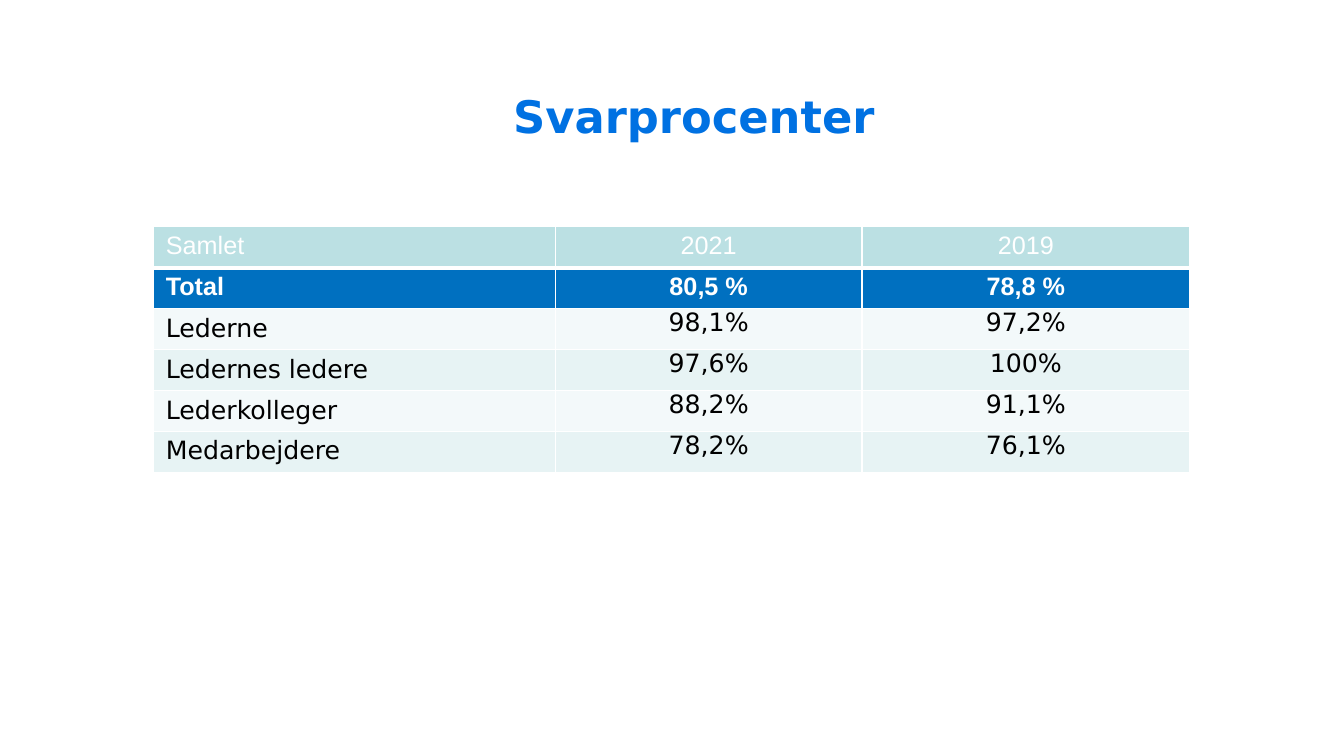
from dataclasses import dataclass

from lxml.etree import SubElement
from pptx import Presentation
from pptx.dml.color import RGBColor
from pptx.enum.text import MSO_ANCHOR, PP_ALIGN
from pptx.oxml.ns import qn
from pptx.util import Pt

PX = 9525  # EMU per px, 96 px to the inch


@dataclass(frozen=True)
class Theme:
    heading_font: str = "DejaVu Sans"
    summary_font: str = "Arial"
    title_size: int = 32
    table_size: int = 18
    title: str = "0071E2"
    white: str = "FFFFFF"
    black: str = "000000"
    header_fill: str = "BBE0E3"
    total_fill: str = "0070C0"
    bands: tuple = ("F3F9FA", "E7F3F4")


THEME = Theme()

RESPONSE_RATES = [
    ("Samlet", "2021", "2019"),
    ("Total", "80,5 %", "78,8 %"),
    ("Lederne", "98,1%", "97,2%"),
    ("Ledernes ledere", "97,6%", "100%"),
    ("Lederkolleger", "88,2%", "91,1%"),
    ("Medarbejdere", "78,2%", "76,1%"),
]
COLUMN_WIDTHS = (383, 292, 312)
ROW_HEIGHT = 39


def px(*lengths):
    return [length * PX for length in lengths]


def style_paragraph(paragraph, font_name, size, color, bold, align):
    paragraph.alignment = align
    font = paragraph.font
    font.name, font.size, font.bold = font_name, Pt(size), bold
    font.color.rgb = RGBColor.from_string(color)


def row_style(row):
    """Fill, text colour, font and weight of a table row."""
    if row == 0:
        return THEME.header_fill, THEME.white, THEME.summary_font, False
    if row == 1:
        return THEME.total_fill, THEME.white, THEME.summary_font, True
    return THEME.bands[row % 2], THEME.black, THEME.heading_font, False


def add_borders(cell, bottom_width):
    properties = cell._tc.get_or_add_tcPr()
    for side, width in (("L", 1), ("R", 1), ("T", 1), ("B", bottom_width)):
        line = SubElement(properties, qn(f"a:ln{side}"), w=str(Pt(width)))
        SubElement(SubElement(line, qn("a:solidFill")), qn("a:srgbClr"), val=THEME.white)


def place_title(slide, left, top, width, height):
    title = slide.shapes.title
    title.left, title.top, title.width, title.height = px(left, top, width, height)
    title.text_frame.text = "Svarprocenter"
    title.text_frame.vertical_anchor = MSO_ANCHOR.MIDDLE
    style_paragraph(title.text_frame.paragraphs[0], THEME.heading_font,
                    THEME.title_size, THEME.title, True, PP_ALIGN.CENTER)


def fill_cell(cell, text, row, column):
    fill, color, font_name, bold = row_style(row)
    is_rate = row > 1 and column > 0
    side, edge = px(7, 0) if is_rate else px(12, 5)
    cell.margin_left = cell.margin_right = side
    cell.margin_top = cell.margin_bottom = edge
    add_borders(cell, bottom_width=3 if row == 0 else 1)
    cell.fill.solid()
    cell.fill.fore_color.rgb = RGBColor.from_string(fill)
    cell.text = text
    style_paragraph(cell.text_frame.paragraphs[0], font_name, THEME.table_size, color,
                    bold, PP_ALIGN.CENTER if column else PP_ALIGN.LEFT)


def add_rate_table(slide, left, top):
    width, height = sum(COLUMN_WIDTHS), ROW_HEIGHT * len(RESPONSE_RATES)
    rates = slide.shapes.add_table(len(RESPONSE_RATES), len(COLUMN_WIDTHS),
                                   *px(left, top, width, height)).table
    for column, column_width in zip(rates.columns, px(*COLUMN_WIDTHS)):
        column.width = column_width
    for row, texts in enumerate(RESPONSE_RATES):
        for column, text in enumerate(texts):
            fill_cell(rates.cell(row, column), text, row, column)


def main():
    presentation = Presentation()
    presentation.slide_width, presentation.slide_height = px(1280, 720)
    slide = presentation.slides.add_slide(presentation.slide_layouts[5])  # title only
    # Heading
    place_title(slide, 85, 50, 1152, 120)
    # Response rates by group and year
    add_rate_table(slide, 146, 216)
    presentation.save("out.pptx")


if __name__ == "__main__":
    main()
